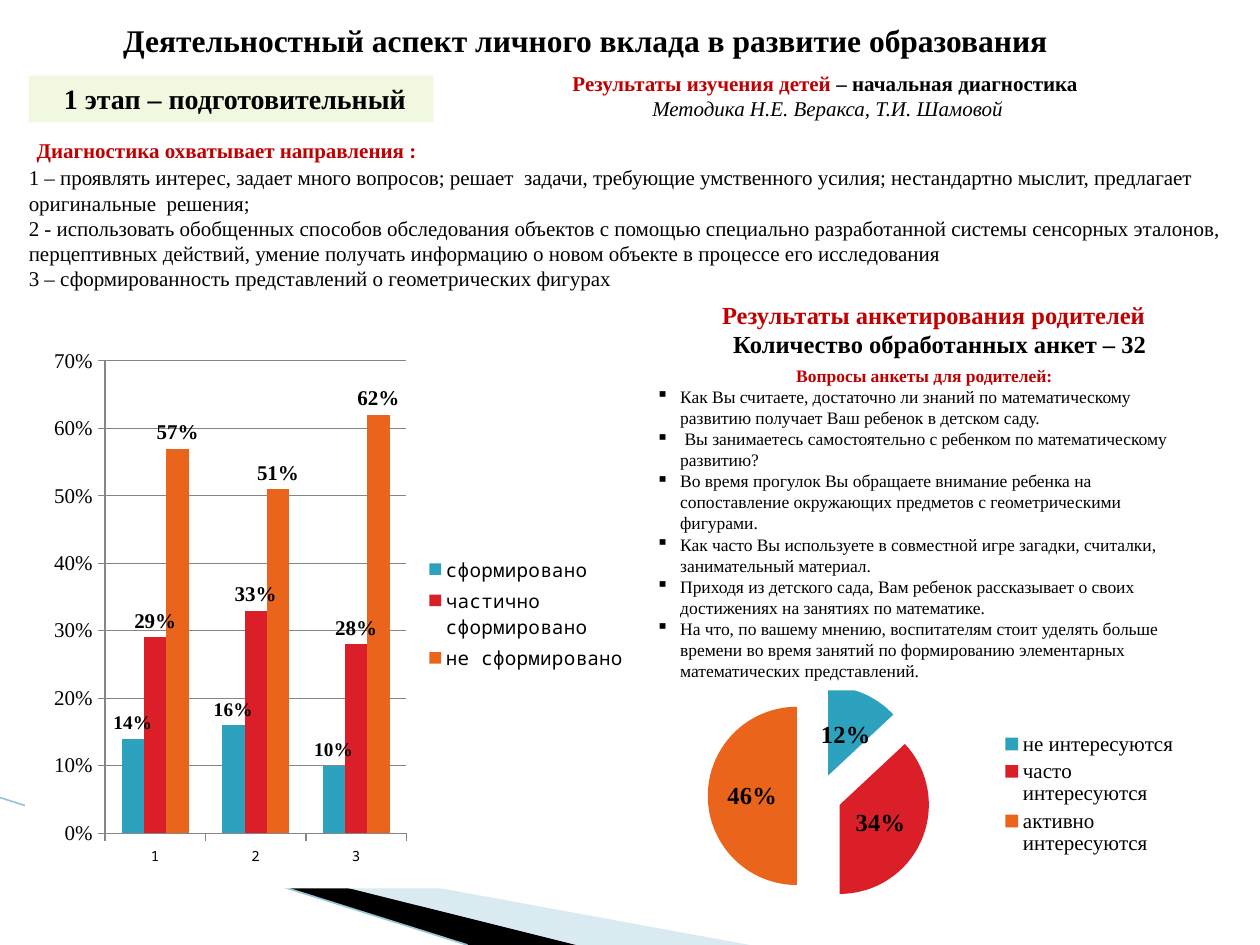
from lxml import etree
from pptx import Presentation
from pptx import util as u
from pptx.chart import data as chart_data
from pptx.dml.color import RGBColor
from pptx.enum import chart as ce
from pptx.enum import shapes, text
from pptx.oxml import parse_xml
from pptx.oxml.ns import nsdecls, qn

COLORS = {"black": "000000", "white": "FFFFFF", "red": "C00000", "mint": "F0F9DF",
          "pale": "A0CBDC", "line": "97C5D8", "grid": "868686"}
SERIES_COLORS = ["2DA2BF", "DA1F28", "EB641B"]
SERIF, MONO = "Times New Roman", "Noto Sans Mono"


def style(font, size, name=SERIF, color="black", bold=False, italic=False):
    font.size, font.name = u.Pt(size), name
    font.bold, font.italic = bold, italic
    font.color.rgb = RGBColor.from_string(COLORS[color])


def add_text(bounds, paragraphs, fill="white", align=text.PP_ALIGN.LEFT):
    """Each paragraph is a list of (text, size, color, bold, italic) spans."""
    box = slide.shapes.add_textbox(*[u.Inches(value) for value in bounds])
    box.fill.solid()
    box.fill.fore_color.rgb = RGBColor.from_string(COLORS[fill])
    frame = box.text_frame
    frame.word_wrap = True
    for number, spans in enumerate(paragraphs):
        para = frame.add_paragraph() if number else frame.paragraphs[0]
        para.alignment = align
        for words, size, color, bold, italic in spans:
            span = para.add_run()
            span.text = words
            style(span.font, size, SERIF, color, bold, italic)
    return box


deck = Presentation()
deck.slide_width, deck.slide_height = u.Inches(10), u.Inches(7.5)
slide = deck.slides.add_slide(deck.slide_layouts[6])
center = text.PP_ALIGN.CENTER

# Decorative wedges and line at the bottom
wedges = [
    ("pale", 40, [(0.55, 6.51), (5.95, 7.5), (4.56, 7.5), (0.55, 6.5)]),
    ("black", 100, [(0.53, 6.49), (4.57, 7.5), (3.72, 7.5), (0.54, 6.5)]),
]
for color, opacity, points in wedges:
    corners = [(u.Inches(x), u.Inches(y)) for x, y in points]
    builder = slide.shapes.build_freeform(*corners[0])
    builder.add_line_segments(corners[1:], close=True)
    wedge = builder.convert_to_shape()
    wedge.shadow.inherit = False
    wedge.line.fill.background()
    wedge.fill.solid()
    wedge.fill.fore_color.rgb = RGBColor.from_string(COLORS[color])
    if opacity < 100:
        tint = wedge.fill._xPr.find(".//" + qn("a:srgbClr"))
        etree.SubElement(tint, qn("a:alpha")).set("val", str(opacity * 1000))

edge = slide.shapes.add_connector(shapes.MSO_CONNECTOR.STRAIGHT, u.Inches(0), u.Inches(6.33),
                                  u.Inches(3.71), u.Inches(7.5))
edge.line.color.rgb = RGBColor.from_string(COLORS["line"])
edge.line.width = u.Pt(0.95)
etree.SubElement(edge._element.spPr, qn("a:effectLst"))

# Title, directions of the diagnostics, survey heading and stage
add_text((0.88, 0.12, 7.56, 0.4), [
    [("Деятельностный аспект личного вклада в развитие образования", 18, "black", True, False)]])

directions = [
    "1 – проявлять интерес, задает много вопросов; решает  задачи, требующие умственного усилия; "
    "нестандартно мыслит, предлагает оригинальные  решения;",
    "2 - использовать обобщенных способов обследования объектов с помощью специально разработанной "
    "системы сенсорных эталонов, перцептивных действий, умение получать информацию о новом объекте "
    "в процессе его исследования",
    "3 – сформированность представлений о геометрических фигурах",
]
add_text((0.13, 0.96, 9.79, 1.45), [
    [(" ", 18, "red", True, True), ("Диагностика охватывает направления :", 12, "red", True, False)],
    *[[(line, 12, "black", False, False)] for line in directions]])

add_text((5.28, 2.33, 4.31, 0.7), [
    [("Результаты анкетирования родителей ", 14, "red", True, False)],
    [(" Количество обработанных анкет – 32", 14, "black", True, False)]], align=center)

add_text((0.23, 0.6, 3.27, 0.37), [
    [("1 этап – подготовительный", 16, "black", True, False)]], "mint", center)

# Pie chart of the parents' interest
pie_data = chart_data.CategoryChartData(number_format="0%")
pie_data.categories = ["не интересуются", "часто интересуются", "активно интересуются"]
pie_data.add_series("Series 1", (0.12, 0.34, 0.46))
pie = slide.shapes.add_chart(ce.XL_CHART_TYPE.PIE, u.Inches(5.08), u.Inches(5.26),
                             u.Inches(4.37), u.Inches(2.08), pie_data).chart
interest = pie.plots[0].series[0]
explosion = etree.Element(qn("c:explosion"), val="25")
interest._element.find(qn("c:tx")).addnext(explosion)
for number, color in enumerate(SERIES_COLORS):
    slice_fill = interest.points[number].format.fill
    slice_fill.solid()
    slice_fill.fore_color.rgb = RGBColor.from_string(color)
pie_labels = interest.data_labels
pie_labels.position = ce.XL_LABEL_POSITION.CENTER

# Column chart of the children's results
column_data = chart_data.CategoryChartData(number_format="0%")
column_data.categories = ["1", "2", "3"]
column_data.add_series("сформировано", (0.14, 0.16, 0.10))
column_data.add_series("частично сформировано", (0.29, 0.33, 0.28))
column_data.add_series("не сформировано", (0.57, 0.51, 0.62))
columns = slide.shapes.add_chart(ce.XL_CHART_TYPE.COLUMN_CLUSTERED, u.Inches(0.2), u.Inches(2.69),
                                 u.Inches(4.88), u.Inches(4.36), column_data).chart
columns.plots[0].gap_width = 150
columns.plots[0].vary_by_categories = False
for series, color in zip(columns.plots[0].series, SERIES_COLORS):
    series.format.fill.solid()
    series.format.fill.fore_color.rgb = RGBColor.from_string(color)
    series.data_labels.position = ce.XL_LABEL_POSITION.OUTSIDE_END

# Fonts, legends and labels of both charts
for chart, legend_size, legend_font, label_sizes in [
        (pie, 12, SERIF, [14]), (columns, 11, MONO, [11, 12, 12])]:
    chart.has_title = False
    style(chart.font, 18, MONO)
    chart.has_legend = True
    chart.legend.position = ce.XL_LEGEND_POSITION.RIGHT
    chart.legend.include_in_layout = False
    style(chart.legend.font, legend_size, legend_font)
    for series, size in zip(chart.plots[0].series, label_sizes):
        labels = series.data_labels
        labels.show_value = True
        labels.number_format, labels.number_format_is_linked = "0%", False
        style(labels.font, size, bold=True)

# Axes, plot area and background of the column chart
value_axis, category_axis = columns.value_axis, columns.category_axis
value_axis.minimum_scale, value_axis.maximum_scale, value_axis.major_unit = 0, 0.7, 0.1
value_axis.tick_labels.number_format = "0%"
value_axis.tick_labels.number_format_is_linked = False
style(value_axis.tick_labels.font, 12)
style(category_axis.tick_labels.font, 8, MONO)
for axis in (value_axis, category_axis):
    axis.major_tick_mark = ce.XL_TICK_MARK.OUTSIDE
    axis.format.line.color.rgb = RGBColor.from_string(COLORS["grid"])
value_axis.has_major_gridlines = True
value_axis.major_gridlines.format.line.color.rgb = RGBColor.from_string(COLORS["grid"])

plot_area = columns._chartSpace.find(".//" + qn("c:plotArea"))
for old_layout in plot_area.findall(qn("c:layout")):
    plot_area.remove(old_layout)
layout = etree.Element(qn("c:layout"))
manual = etree.SubElement(layout, qn("c:manualLayout"))
for tag, value in [("layoutTarget", "inner"), ("xMode", "edge"), ("yMode", "edge"),
                   ("x", "0.13"), ("y", "0.04"), ("w", "0.49"), ("h", "0.86")]:
    etree.SubElement(manual, qn("c:" + tag)).set("val", value)
plot_area.insert(0, layout)
columns._chartSpace.find(qn("c:chart")).addnext(parse_xml(
    f'<c:spPr {nsdecls("c", "a")}><a:solidFill><a:srgbClr val="{COLORS["white"]}"/></a:solidFill>'
    '<a:ln><a:noFill/></a:ln></c:spPr>'))

# Heading of the children's results
add_text((3.44, 0.51, 6.26, 0.5), [
    [("Результаты изучения детей ", 12, "red", True, False),
     ("– начальная диагностика ", 12, "black", True, False)],
    [("Методика Н.Е. Веракса, Т.И. Шамовой", 12, "black", False, True)]], align=center)

# Questions for the parents
questions = [
    "Как Вы считаете, достаточно ли знаний по математическому развитию получает Ваш ребенок в детском саду.",
    " Вы занимаетесь самостоятельно с ребенком по математическому развитию?",
    "Во время прогулок Вы обращаете внимание ребенка на сопоставление окружающих предметов "
    "с геометрическими фигурами.",
    "Как часто Вы используете в совместной игре загадки, считалки, занимательный материал.",
    "Приходя из детского сада, Вам ребенок рассказывает о своих достижениях на занятиях по математике.",
    "На что, по вашему мнению, воспитателям стоит уделять больше времени во время занятий "
    "по формированию элементарных математических представлений.",
]
survey = add_text((5.11, 2.85, 4.45, 2.63), [
    [("Вопросы анкеты для родителей:", 10, "red", True, False)],
    *[[(question, 10, "black", False, False)] for question in questions]])
heading, *items = survey.text_frame.paragraphs
heading.alignment = center
for para in items:
    properties = para._p.get_or_add_pPr()
    properties.set("marL", str(u.Inches(0.19)))
    properties.set("indent", str(-u.Inches(0.19)))
    etree.SubElement(properties, qn("a:buChar")).set("char", "▪")

deck.save("out.pptx")
